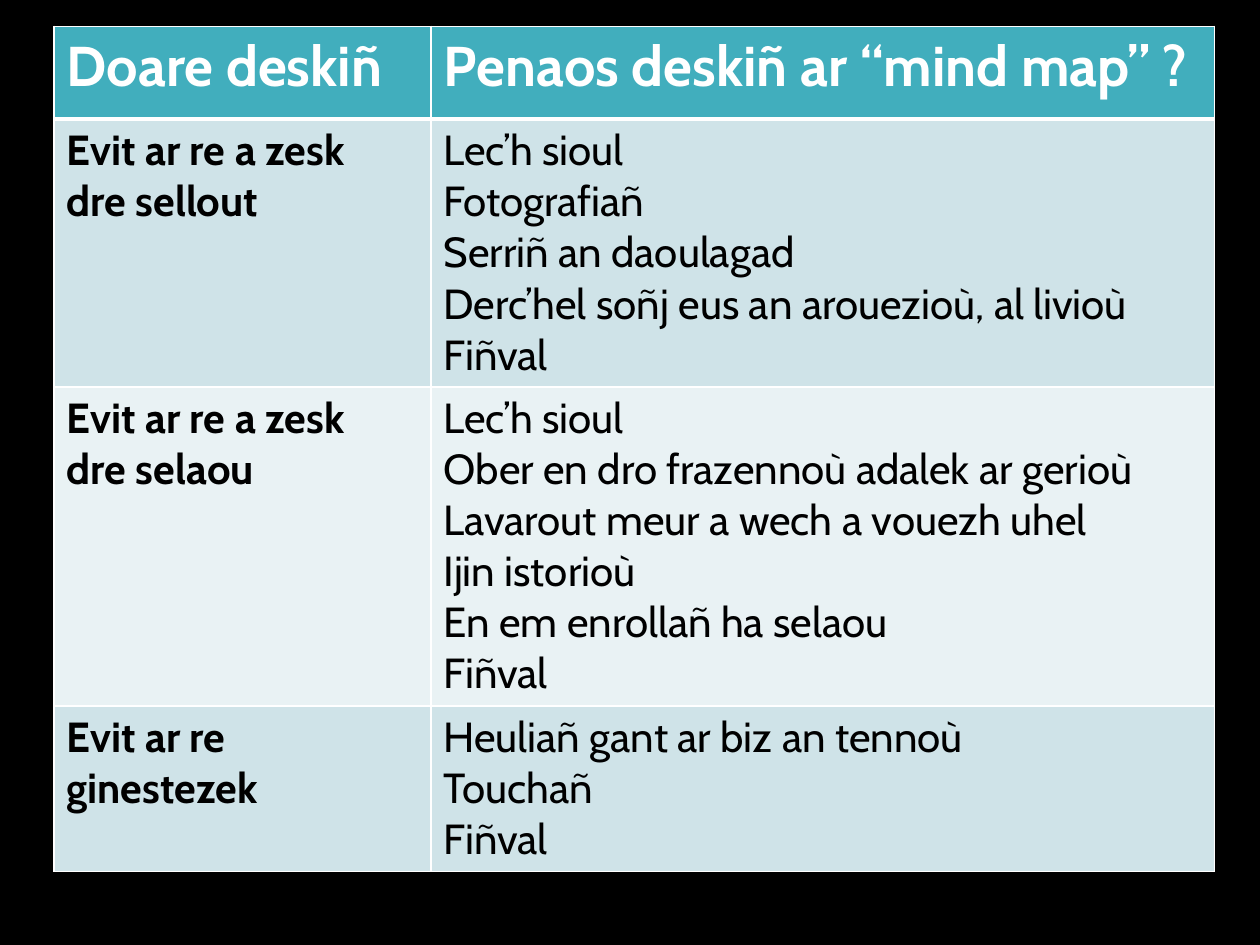
from pptx import Presentation
from pptx.dml.color import RGBColor as Color
from pptx.oxml.ns import qn
from pptx.util import Cm, Pt
from lxml.etree import SubElement as add_element

HEADER = ("Doare deskiñ", "Penaos deskiñ ar “mind map” ?")
METHODS = [
    (
        ["Evit ar re a zesk", "dre sellout"],
        [
            "Lec’h sioul",
            "Fotografiañ",
            "Serriñ an daoulagad",
            "Derc’hel soñj eus an arouezioù, al livioù",
            "Fiñval",
        ],
    ),
    (
        ["Evit ar re a zesk", "dre selaou"],
        [
            "Lec’h sioul",
            "Ober en dro frazennoù adalek ar gerioù",
            "Lavarout meur a wech a vouezh uhel",
            "Ijin istorioù",
            "En em enrollañ ha selaou",
            "Fiñval",
        ],
    ),
    (
        ["Evit ar re ginestezek"],
        ["Heuliañ gant ar biz an tennoù", "Touchañ", "Fiñval"],
    ),
]
THEME = {
    "font": "Cabin",
    "header_size": Pt(32),
    "body_size": Pt(24),
    "background": "000000",
    "header_fill": "41AEBD",
    "band_fills": ("CFE3E8", "E9F2F4"),
    "header_text": "FFFFFF",
    "body_text": "000000",
    "border": "FFFFFF",
    "thin": Pt(1),
    "thick": Pt(3),
}
COLUMN_WIDTHS = (Cm(7.6), Cm(15.79))
ROW_HEIGHTS = (Cm(1.87), Cm(5.38), Cm(6.43), Cm(3.33))
LEFT, TOP = Cm(1.09), Cm(0.53)


def set_fill(fill, color):
    fill.solid()
    fill.fore_color.rgb = Color.from_string(color)


def add_borders(cell, widths):
    properties = cell._tc.get_or_add_tcPr()
    for position, (side, width) in enumerate(widths.items()):
        line = properties.makeelement(qn(f"a:{side}"), {"w": str(width)})
        solid = add_element(line, qn("a:solidFill"))
        add_element(solid, qn("a:srgbClr"), val=THEME["border"])
        properties.insert(position, line)


def write_cell(cell, lines, fill, formats, color):
    frame = cell.text_frame
    frame.text = "\n".join(lines)
    for para in frame.paragraphs:
        for span in para.runs:
            for name, value in formats.items():
                setattr(span.font, name, value)
            span.font.color.rgb = Color.from_string(color)
    set_fill(cell.fill, fill)


def build_table(page):
    rows = [tuple([title] for title in HEADER), *METHODS]
    table = page.shapes.add_table(
        len(rows), len(HEADER), LEFT, TOP, sum(COLUMN_WIDTHS), sum(ROW_HEIGHTS)
    ).table
    for column, width in zip(table.columns, COLUMN_WIDTHS):
        column.width = width
    for row, height in zip(table.rows, ROW_HEIGHTS):
        row.height = height

    for row_index, row in enumerate(rows):
        is_header = row_index == 0
        kind = "header" if is_header else "body"
        bands = THEME["band_fills"]
        fill = THEME["header_fill"] if is_header else bands[(row_index - 1) % len(bands)]
        borders = dict.fromkeys(("lnL", "lnR", "lnT", "lnB"), THEME["thin"])
        if is_header:
            borders["lnB"] = THEME["thick"]
        elif row_index == 1:
            borders["lnT"] = THEME["thick"]
        for column_index, lines in enumerate(row):
            cell = table.cell(row_index, column_index)
            formats = {
                "name": THEME["font"],
                "size": THEME[f"{kind}_size"],
                "bold": is_header or column_index == 0,
            }
            write_cell(cell, lines, fill, formats, THEME[f"{kind}_text"])
            add_borders(cell, borders)


def main():
    deck = Presentation()
    deck.slide_width, deck.slide_height = Cm(25.4), Cm(19.05)
    page = deck.slides.add_slide(deck.slide_layouts[6])
    set_fill(page.background.fill, THEME["background"])
    build_table(page)
    deck.save("out.pptx")


if __name__ == "__main__":
    main()
